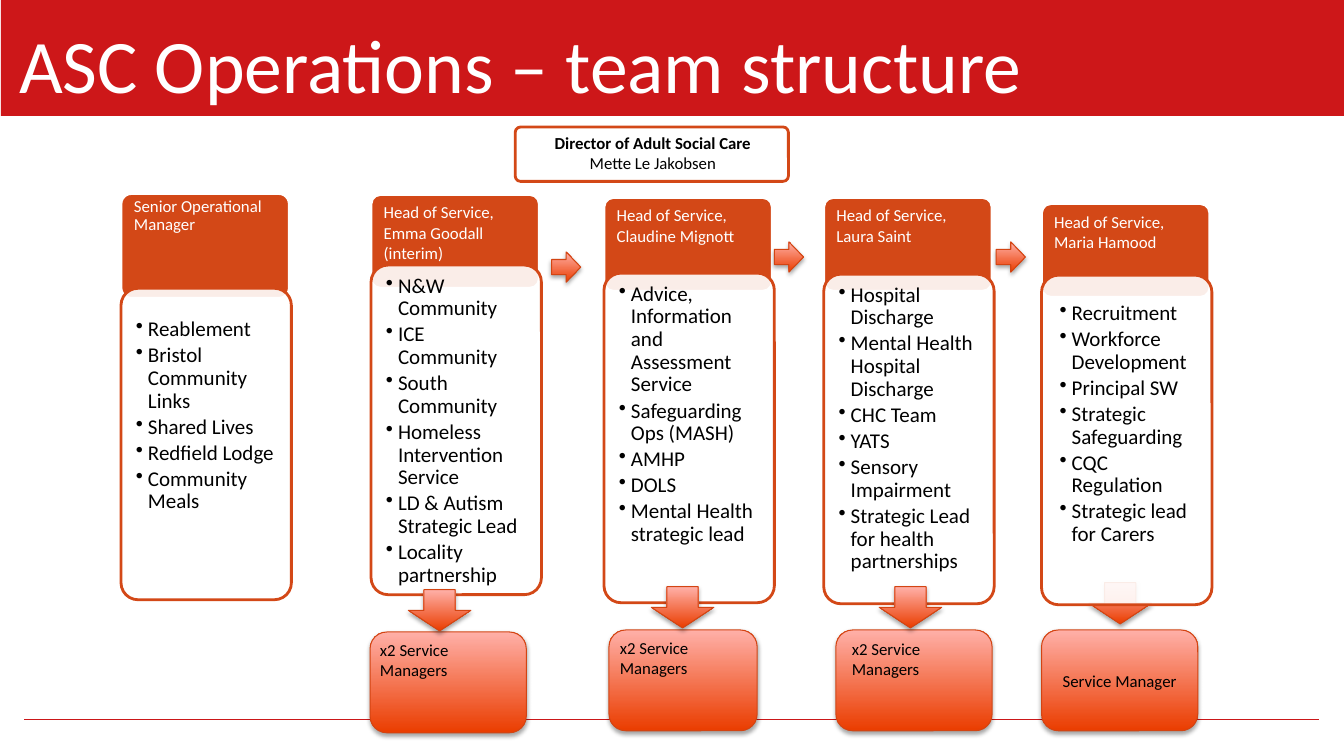
from dataclasses import dataclass

from lxml.etree import SubElement
from pptx import Presentation
from pptx.dml.color import RGBColor
from pptx.enum.shapes import MSO_CONNECTOR, MSO_SHAPE
from pptx.enum.text import MSO_ANCHOR, MSO_AUTO_SIZE, PP_ALIGN
from pptx.oxml.ns import qn
from pptx.util import Inches, Pt


@dataclass(frozen=True)
class Theme:
    font: str = "Calibri"
    title_size: int = 54
    list_size: int = 15
    label_size: int = 12
    red: str = "CD1719"
    rule: str = "CB1719"
    orange: str = "D34817"
    edge: str = "D34412"
    deep: str = "EA3D00"
    pale: str = "FFB0A8"
    white: str = "FFFFFF"
    black: str = "000000"


@dataclass(frozen=True)
class Team:
    left: float
    header_top: float
    card_top: float
    head: str
    duties: tuple
    header_height: float = 0.93
    card_height: float = 3.27
    header_inset: float = 0.05
    header_spacing: float = 1.0
    card_insets: tuple = (0.1, 0.05)


@dataclass(frozen=True)
class Managers:
    box: tuple
    arrow: tuple
    text: str = "x2 Service Managers"
    insets: tuple = (0.05, 0.03)
    centred: bool = False


THEME = Theme()

TEAMS = (
    Team(1.2, 1.92, 2.86, "Senior Operational Manager",
         ("Reablement", "Bristol Community Links", "Shared Lives",
          "Redfield Lodge", "Community Meals"),
         header_height=1.04, card_height=3.09, header_inset=0.01,
         header_spacing=0.9, card_insets=(0.1, 0.25)),
    Team(3.68, 1.93, 2.63, "Head of Service, Emma Goodall (interim)",
         ("N&W Community", "ICE Community", "South Community",
          "Homeless Intervention Service", "LD & Autism Strategic Lead",
          "Locality partnership")),
    Team(5.99, 1.96, 2.71, "Head of Service, Claudine Mignott",
         ("Advice, Information and Assessment Service",
          "Safeguarding Ops (MASH)", "AMHP", "DOLS",
          "Mental Health strategic lead")),
    Team(8.17, 1.96, 2.72, "Head of Service, Laura Saint",
         ("Hospital Discharge", "Mental Health Hospital Discharge", "CHC Team",
          "YATS", "Sensory Impairment",
          "Strategic Lead for health partnerships")),
    Team(10.33, 2.02, 2.73, "Head of Service, Maria Hamood",
         ("Recruitment", "Workforce Development", "Principal SW",
          "Strategic Safeguarding", "CQC Regulation",
          "Strategic lead for Carers"),
         card_insets=(0.13, 0.22)),
)

# One entry per team; the first team has no managers below it
MANAGERS = (
    None,
    Managers((3.67, 6.27, 1.55, 1), (4.05, 5.85)),
    Managers((6.04, 6.25, 1.47, 1), (6.46, 5.82), insets=(0.06, 0.03)),
    Managers((8.29, 6.25, 1.55, 1), (8.72, 5.82), insets=(0.11, 0.04)),
    Managers((10.33, 6.25, 1.55, 1), (10.8, 5.78), "Service Manager",
             (0.1, 0.05), centred=True),
)

SIDE_ARROWS = ((5.47, 2.5), (7.68, 2.4), (9.88, 2.4))


def colour(value):
    return RGBColor.from_string(value)


def add_panel(slide, kind, box, fill, line=None, width=2.0, radius=None):
    shape = slide.shapes.add_shape(kind, *map(Inches, box))
    shape.shadow.inherit = False
    shape.fill.solid()
    shape.fill.fore_color.rgb = colour(fill)
    if line:
        shape.line.color.rgb = colour(line)
        shape.line.width = Pt(width)
    else:
        shape.line.fill.background()
    if radius is not None:
        shape.adjustments[0] = radius
    return shape


def add_glossy(slide, kind, box):
    """Gradient shape with a soft shadow below."""
    shape = add_panel(slide, kind, box, THEME.deep, THEME.edge, 0.75)
    shape.fill.gradient()
    shape.fill.gradient_angle = 90
    for stop, value in zip(shape.fill.gradient_stops, (THEME.deep, THEME.pale)):
        stop.color.rgb = colour(value)
    effects = shape.element.spPr.find(qn("a:effectLst"))
    shadow = SubElement(effects, qn("a:outerShdw"), blurRad=str(Pt(3.1)),
                        dist=str(Pt(1.8)), dir="5400000", rotWithShape="0")
    black = SubElement(shadow, qn("a:srgbClr"), val=THEME.black)
    SubElement(black, qn("a:alpha"), val="35000")
    return shape


def write(shape, lines, size, ink, insets=(0.1, 0.05), align=PP_ALIGN.LEFT,
          anchor=MSO_ANCHOR.TOP, spacing=1.0, after=0):
    frame = shape.text_frame
    frame.text = "\n".join(lines)
    frame.word_wrap = True
    frame.auto_size = MSO_AUTO_SIZE.NONE
    frame.vertical_anchor = anchor
    frame.margin_left, frame.margin_top = map(Inches, insets)
    for para in frame.paragraphs:
        para.alignment = align
        para.line_spacing = spacing
        para.space_before = Pt(0)
        para.space_after = Pt(after)
        for span in para.runs:
            span.font.name = THEME.font
            span.font.size = Pt(size)
            span.font.color.rgb = colour(ink)
    return frame


def add_bullets(frame):
    for para in frame.paragraphs:
        properties = para._p.get_or_add_pPr()
        properties.set("marL", str(Inches(0.12)))
        properties.set("indent", str(-Inches(0.12)))
        SubElement(properties, qn("a:buChar"), char="•")


def add_card(slide, box):
    card = add_panel(slide, MSO_SHAPE.ROUNDED_RECTANGLE, box, THEME.white,
                     THEME.orange, radius=0.1)
    tint = card.element.spPr.find(qn("a:solidFill"))[0]
    SubElement(tint, qn("a:alpha"), val="90000")
    return card


def add_title(slide, box):
    left, top, width, height = box
    rule = slide.shapes.add_connector(MSO_CONNECTOR.STRAIGHT, Inches(0.24), Inches(7.13),
                                      Inches(13.08), Inches(7.13))
    rule.line.color.rgb = colour(THEME.rule)
    rule.line.width = Pt(0.25)
    SubElement(rule.element.spPr, qn("a:effectLst"))
    band = add_panel(slide, MSO_SHAPE.RECTANGLE, box, THEME.red)
    title = slide.shapes.title
    title.left, title.top = Inches(left + 0.08), Inches(top + 0.13)
    title.width, title.height = Inches(width - 1.43), Inches(height - 0.36)
    write(title, ["ASC Operations – team structure"], THEME.title_size, THEME.white)
    band.element.addnext(title.element)


def add_director(slide, box):
    card = add_card(slide, box)
    frame = write(card, ["Director of Adult Social Care", "Mette Le Jakobsen"],
                  THEME.label_size, THEME.black, insets=(0.12, 0.06),
                  align=PP_ALIGN.CENTER, spacing=0.9, after=1.8)
    frame.paragraphs[0].runs[0].font.bold = True


def add_team(slide, team):
    header = add_panel(slide, MSO_SHAPE.ROUNDED_RECTANGLE,
                       (team.left, team.header_top, 1.67, team.header_height),
                       THEME.orange, THEME.white, radius=0.1)
    write(header, [team.head], THEME.label_size, THEME.white,
          insets=(0.1, team.header_inset), spacing=team.header_spacing)
    card = add_card(slide, (team.left, team.card_top, 1.69, team.card_height))
    add_bullets(write(card, team.duties, THEME.list_size, THEME.black,
                      insets=team.card_insets, spacing=0.9, after=2.4))


def add_managers(slide, managers):
    box = add_glossy(slide, MSO_SHAPE.ROUNDED_RECTANGLE, managers.box)
    write(box, [managers.text], THEME.label_size, THEME.black, managers.insets,
          PP_ALIGN.CENTER if managers.centred else PP_ALIGN.LEFT,
          MSO_ANCHOR.MIDDLE if managers.centred else MSO_ANCHOR.TOP)


def add_down_arrow(slide, managers):
    add_glossy(slide, MSO_SHAPE.DOWN_ARROW, (*managers.arrow, 0.62, 0.41))


def main():
    deck = Presentation()
    deck.slide_width, deck.slide_height = Inches(13.33), Inches(7.5)
    page = deck.slides.add_slide(deck.slide_layouts[5])
    add_title(page, (0.01, 0, 13.33, 1.15))
    add_director(page, (5.11, 1.26, 2.71, 0.54))

    # The last arrow sits behind its card, the others in front
    add_down_arrow(page, MANAGERS[-1])
    for team in TEAMS:
        add_team(page, team)
    for managers in MANAGERS[1:]:
        add_managers(page, managers)
    for managers in MANAGERS[1:-1]:
        add_down_arrow(page, managers)
    for left, top in SIDE_ARROWS:
        add_glossy(page, MSO_SHAPE.RIGHT_ARROW, (left, top, 0.29, 0.3))
    deck.save("out.pptx")


if __name__ == "__main__":
    main()
